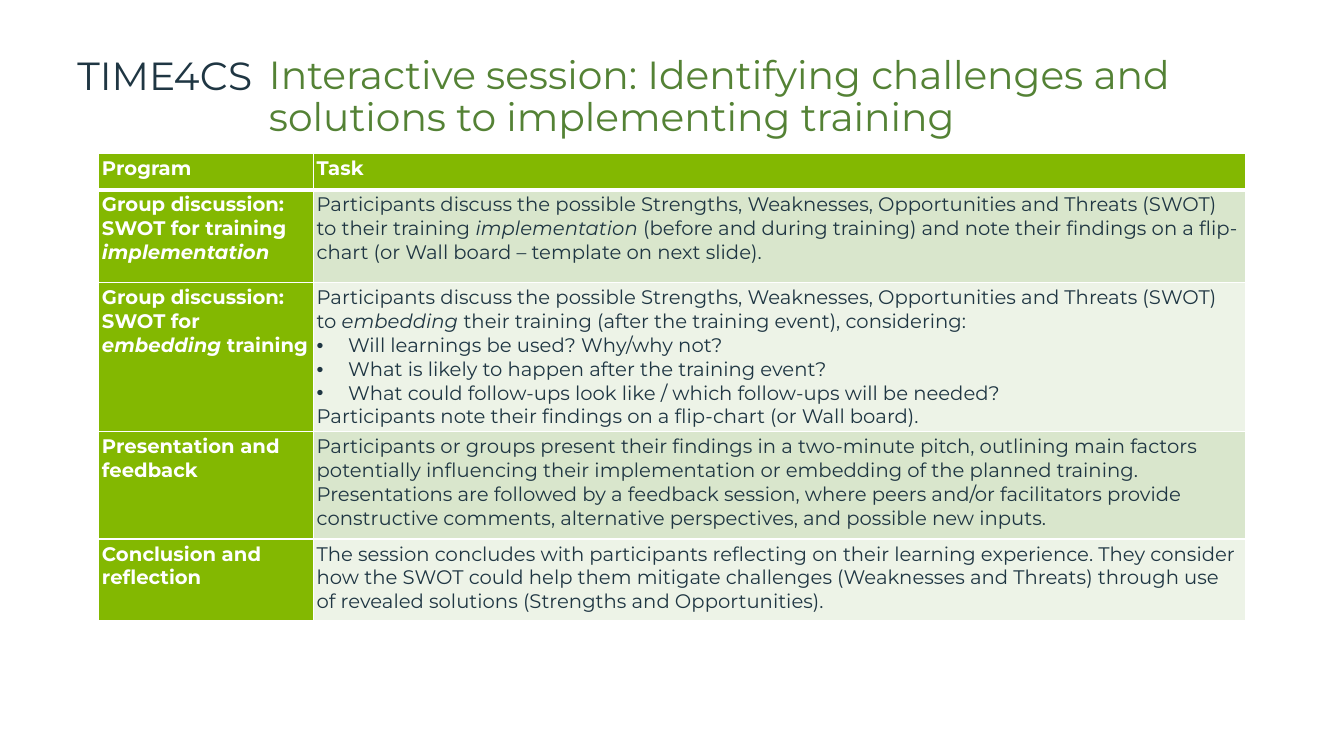
from pptx import Presentation
from pptx import util as u
from pptx.dml.color import RGBColor
from pptx.enum import text
from pptx.oxml import parse_xml
from pptx.oxml.ns import nsdecls

WHITE = RGBColor(0xFF, 0xFF, 0xFF)
NAVY = RGBColor(0x1F, 0x36, 0x43)
TITLE_GREEN = RGBColor(0x54, 0x82, 0x35)
GREEN = RGBColor(0x83, 0xB8, 0x01)
BANDS = (RGBColor(0xD9, 0xE6, 0xCC), RGBColor(0xED, 0xF3, 0xE7))

FONT = "Montserrat"
HEADING = {"name": FONT, "size": u.Pt(28)}
LABEL = {"name": FONT, "size": u.Pt(14), "bold": True}
BODY = {"name": FONT, "size": u.Pt(14), "bold": False}
BULLET = "• "
SWOT = ("Participants discuss the possible Strengths, Weaknesses, "
        "Opportunities and Threats (SWOT) to ")

COLUMN_WIDTHS = (5.41, 23.5)
ROW_HEIGHTS = (0.91, 2.34, 3.76, 2.7, 2.06)
PROGRAM = [
    ("Program", ["Task"]),
    ("Group discussion: SWOT for training *implementation*", [
        SWOT + "their training *implementation* (before and during training) and "
        "note their findings on a flip-chart (or Wall board – template on next slide)."]),
    ("Group discussion: SWOT for *embedding* training", [
        SWOT + "*embedding* their training (after the training event), considering:",
        BULLET + "Will learnings be used? Why/why not?",
        BULLET + "What is likely to happen after the training event?",
        BULLET + "What could follow-ups look like / which follow-ups will be needed?",
        "Participants note their findings on a flip-chart (or Wall board)."]),
    ("Presentation and feedback", [
        "Participants or groups present their findings in a two-minute pitch, "
        "outlining main factors potentially influencing their implementation or "
        "embedding of the planned training. Presentations are followed by a feedback "
        "session, where peers and/or facilitators provide constructive comments, "
        "alternative perspectives, and possible new inputs."]),
    ("Conclusion and reflection", [
        "The session concludes with participants reflecting on their learning "
        "experience. They consider how the SWOT could help them mitigate challenges "
        "(Weaknesses and Threats) through use of revealed solutions (Strengths and "
        "Opportunities)."]),
]


def apply(target, values):
    for name, value in values.items():
        setattr(target, name, value)


def add_bullet(paragraph):
    properties = paragraph._p.get_or_add_pPr()
    properties.set("marL", str(u.Cm(0.79)))
    properties.set("indent", str(-u.Cm(0.79)))
    properties.append(parse_xml(f'<a:buFont {nsdecls("a")} typeface="Arial"/>'))
    properties.append(parse_xml(f'<a:buChar {nsdecls("a")} char="•"/>'))


def write(frame, lines, font, color):
    for index, line in enumerate(lines):
        paragraph = frame.add_paragraph() if index else frame.paragraphs[0]
        if line.startswith(BULLET):
            add_bullet(paragraph)
        for position, part in enumerate(line.removeprefix(BULLET).split("*")):
            if part:
                run = paragraph.add_run()
                run.text = part
                apply(run.font, {**font, "italic": position % 2 == 1})
                run.font.color.rgb = color


def add_heading(slide, box, wording, color, spacing):
    frame = slide.shapes.add_textbox(*map(u.Cm, box)).text_frame
    apply(frame, {"word_wrap": True, "vertical_anchor": text.MSO_ANCHOR.TOP})
    write(frame, [wording], HEADING, color)
    frame.paragraphs[0].line_spacing = spacing


def add_header(slide, left, top):
    add_heading(slide, (left, top, 5.15, 1.45), "TIME4CS", NAVY, 1.0)
    add_heading(slide, (left + 4.83, top + 0.1, 25.63, 1.17),
                "Interactive session: Identifying challenges and solutions "
                "to implementing training", TITLE_GREEN, 0.9)


def set_borders(cell, widths):
    properties = cell._tc.get_or_add_tcPr()
    for side, width in widths.items():
        properties.append(parse_xml(
            f'<a:ln{side} {nsdecls("a")} w="{u.Pt(width)}"><a:solidFill>'
            f'<a:srgbClr val="{WHITE}"/></a:solidFill></a:ln{side}>'))


def fill_cell(cell, lines, font, color, background, borders):
    margin = u.Cm(0.08)
    apply(cell, {"margin_left": margin, "margin_right": margin,
                 "margin_top": margin, "margin_bottom": margin,
                 "vertical_anchor": text.MSO_ANCHOR.TOP})
    set_borders(cell, borders)
    cell.fill.solid()
    cell.fill.fore_color.rgb = background
    write(cell.text_frame, lines, font, color)


def add_program_table(slide, left, top):
    box = (left, top, sum(COLUMN_WIDTHS), sum(ROW_HEIGHTS))
    table = slide.shapes.add_table(len(PROGRAM), 2, *map(u.Cm, box)).table
    for column, width in zip(table.columns, COLUMN_WIDTHS):
        column.width = u.Cm(width)
    for index, (label, task) in enumerate(PROGRAM):
        table.rows[index].height = u.Cm(ROW_HEIGHTS[index])
        borders = {"L": 1, "R": 1, "T": 3 if index == 1 else 1,
                   "B": 3 if index == 0 else 1}
        label_style = (LABEL, WHITE, GREEN)
        task_style = (BODY, NAVY, BANDS[(index - 1) % 2]) if index else label_style
        fill_cell(table.cell(index, 0), [label], *label_style, borders)
        fill_cell(table.cell(index, 1), task, *task_style, borders)


def main():
    presentation = Presentation()
    apply(presentation, {"slide_width": u.Cm(33.87), "slide_height": u.Cm(19.05)})
    slide = presentation.slides.add_slide(presentation.slide_layouts[6])
    add_header(slide, 1.7, 1.17)
    add_program_table(slide, 2.49, 3.87)
    presentation.save("out.pptx")


if __name__ == "__main__":
    main()
